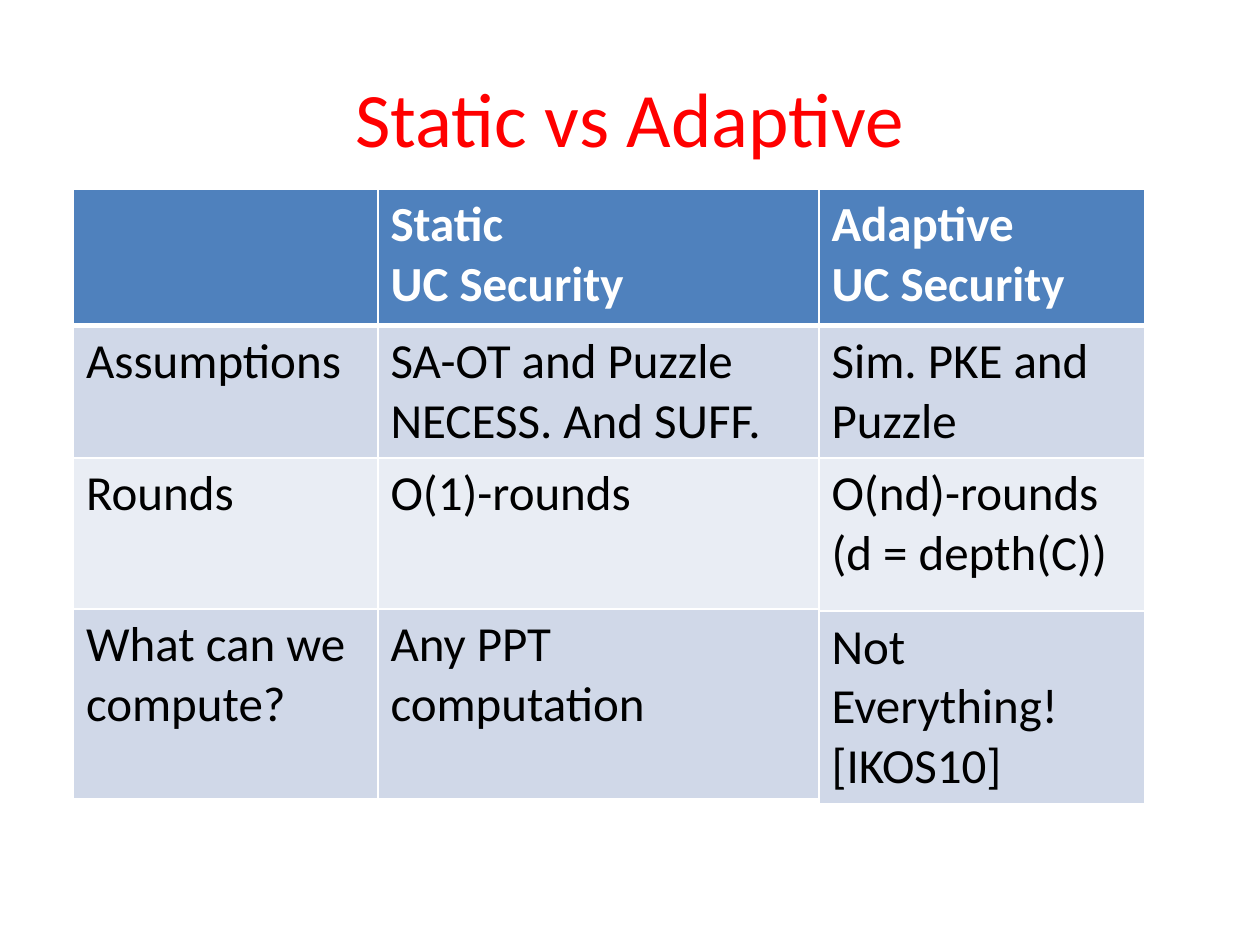
from pptx import Presentation
from pptx.dml.color import RGBColor
from pptx.enum.text import MSO_ANCHOR, PP_ALIGN
from pptx.oxml import parse_xml
from pptx.oxml.ns import nsdecls
from pptx.util import Pt

FONT = "Calibri"
WHITE = "FFFFFF"
BLACK = "000000"
RED = "FF0000"
HEADER_FILL = "4F81BD"
BAND_FILLS = ["E9EDF4", "D0D8E8"]
TABLE_TOP = 108

STATIC_ROWS = [
    ["", "Static\nUC Security"],
    ["Assumptions", "SA-OT and Puzzle\nNECESS. And SUFF."],
    ["Rounds", "O(1)-rounds"],
    ["What can we compute?", "Any PPT computation"],
]
ADAPTIVE_ROWS = [
    ["Adaptive\nUC Security"],
    ["Sim. PKE and Puzzle"],
    ["O(nd)-rounds\n(d = depth(C))"],
    ["Not Everything! [IKOS10]"],
]


def color(hex_text):
    return RGBColor.from_string(hex_text)


def format_font(para, size, hex_text, bold=False):
    para.font.name = FONT
    para.font.size = Pt(size)
    para.font.bold = bold
    para.font.color.rgb = color(hex_text)


def add_title(page, text):
    title = page.shapes.title
    title.left, title.top, title.width, title.height = Pt(36), Pt(21.6), Pt(648), Pt(90)
    frame = title.text_frame
    frame.text = text
    frame.vertical_anchor = MSO_ANCHOR.MIDDLE
    para = frame.paragraphs[0]
    para.alignment = PP_ALIGN.CENTER
    format_font(para, 44, RED)


def set_borders(cell, top, bottom):
    properties = cell._tc.get_or_add_tcPr()
    for side, width in (("L", 1), ("R", 1), ("T", top), ("B", bottom)):
        properties.append(parse_xml(
            f'<a:ln{side} {nsdecls("a")} w="{Pt(width)}"><a:solidFill>'
            f'<a:srgbClr val="{WHITE}"/></a:solidFill></a:ln{side}>'
        ))


def format_cell(cell, text, row):
    header = row == 0
    set_borders(cell, top=3 if row == 1 else 1, bottom=3 if header else 1)
    cell.fill.solid()
    cell.fill.fore_color.rgb = color(HEADER_FILL if header else BAND_FILLS[row % 2])
    cell.text = text
    for para in cell.text_frame.paragraphs:
        format_font(para, 28, WHITE if header else BLACK, header)


def add_comparison(page, left, widths, heights, rows):
    table = page.shapes.add_table(
        len(rows), len(widths), Pt(left), Pt(TABLE_TOP), Pt(sum(widths)), Pt(sum(heights))
    ).table
    for column, width in zip(table.columns, widths):
        column.width = Pt(width)
    for row, (height, texts) in enumerate(zip(heights, rows)):
        table.rows[row].height = Pt(height)
        for column, text in enumerate(texts):
            format_cell(table.cell(row, column), text, row)


def main():
    deck = Presentation()
    deck.slide_width, deck.slide_height = Pt(720), Pt(540)
    page = deck.slides.add_slide(deck.slide_layouts[5])
    add_comparison(page, 468, [186], [78, 75.6, 87.6, 109.4], ADAPTIVE_ROWS)
    add_title(page, "Static vs Adaptive")
    add_comparison(page, 42, [174, 252], [78, 75.6, 86.4, 108.6], STATIC_ROWS)
    deck.save("out.pptx")


if __name__ == "__main__":
    main()
